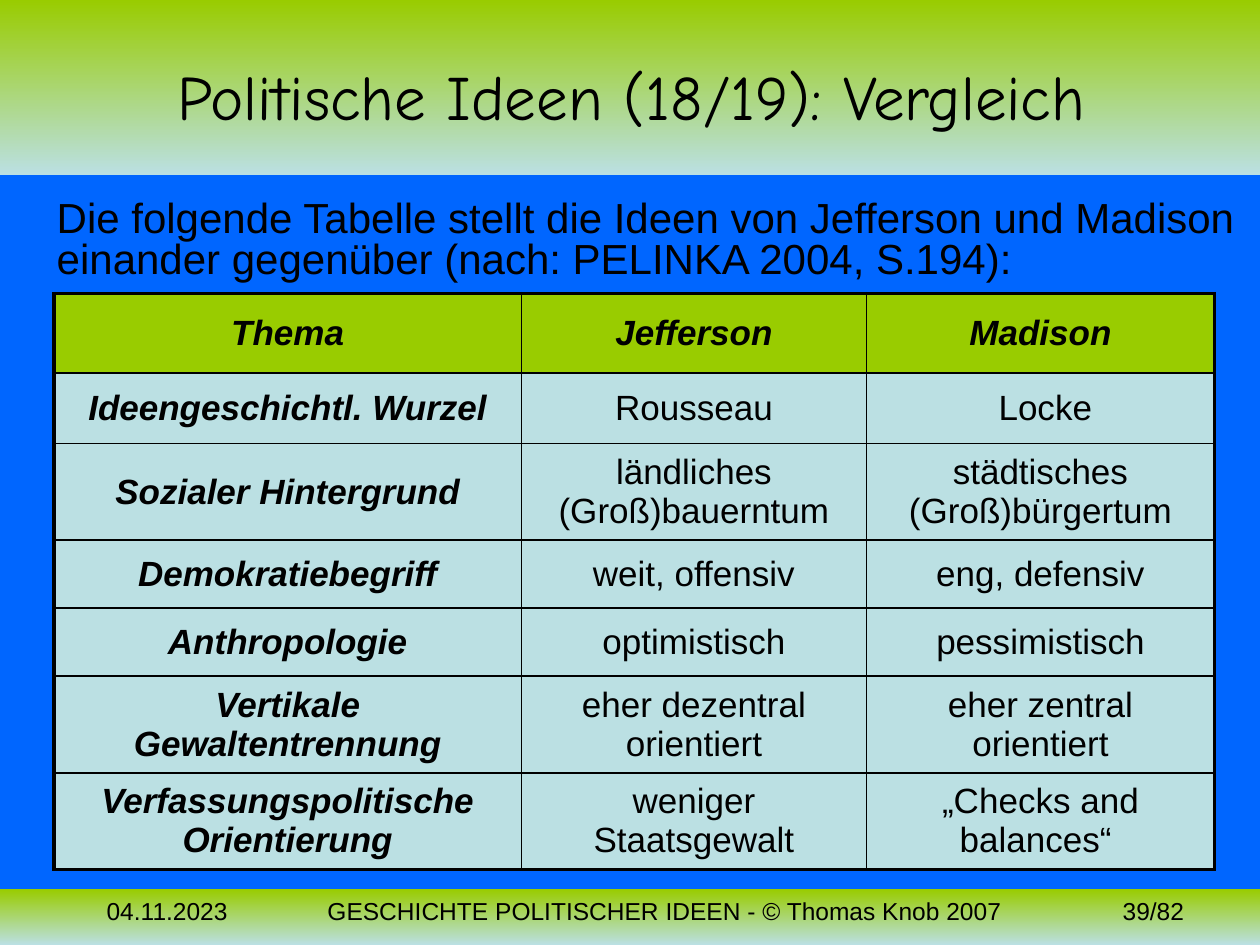
from lxml.etree import SubElement
from pptx import Presentation
from pptx.dml.color import RGBColor
from pptx.enum.shapes import MSO_SHAPE
from pptx.enum.text import MSO_ANCHOR, MSO_AUTO_SIZE, PP_ALIGN
from pptx.oxml.ns import qn
from pptx.util import Cm, Pt

TITLE = "Politische Ideen (18/19): Vergleich"
INTRO = ("Die folgende Tabelle stellt die Ideen von Jefferson und Madison "
         "einander gegenüber (nach: PELINKA 2004, S.194):")
# "\v" is a line break inside a paragraph
ROWS = [
    ("Thema", "Jefferson", "Madison"),
    ("Ideengeschichtl. Wurzel", "Rousseau", " Locke"),
    ("Sozialer Hintergrund", "ländliches\v(Groß)bauerntum", "städtisches\v(Groß)bürgertum"),
    ("Demokratiebegriff", "weit, offensiv", "eng, defensiv"),
    ("Anthropologie", "optimistisch", "pessimistisch"),
    ("Vertikale\vGewaltentrennung", "eher dezentral\vorientiert", "eher zentral\vorientiert"),
    ("Verfassungspolitische\vOrientierung", "weniger\vStaatsgewalt", "„Checks and\vbalances“ "),
]
# text, left, width (cm), alignment
FOOTER = [
    ("04.11.2023", 1.9, 4.2, PP_ALIGN.LEFT),
    ("GESCHICHTE POLITISCHER IDEEN - © Thomas Knob 2007", 6.1, 14.6, PP_ALIGN.CENTER),
    ("39/82", 21.32, 2.8, PP_ALIGN.RIGHT),
]
COLORS = {"background": "0066FF", "green": "99CC00", "pale": "BBE0E3", "text": "000000"}
COLUMN_WIDTHS = (9.42, 6.96, 7.01)
ROW_HEIGHTS = (1.6, 1.42) + (1.37,) * 5
SLIDE_WIDTH, SLIDE_HEIGHT = 25.4, 19.05
HEADER_HEIGHT, FOOTER_HEIGHT = 3.53, 1.12
FOOTER_TOP = SLIDE_HEIGHT - FOOTER_HEIGHT
OUTER_LINE, INNER_LINE = 2.25, 1


def color(name):
    return RGBColor.from_string(COLORS[name])


def place(shape, left, top, width, height):
    shape.left, shape.top, shape.width, shape.height = map(Cm, (left, top, width, height))


def write(text_frame, text, size, alignment, font="Arial", bold=False):
    """Fill the frame with one paragraph; bold text is also italic."""
    text_frame.text = text
    paragraph = text_frame.paragraphs[0]
    paragraph.alignment = alignment
    for run in paragraph.runs:
        run.font.name, run.font.size = font, Pt(size)
        run.font.bold = run.font.italic = bold
        run.font.color.rgb = color("text")
    return paragraph


def add_band(slide, position, top, height):
    """Add a full-width gradient band behind the placeholders."""
    band = slide.shapes.add_shape(MSO_SHAPE.RECTANGLE, 0, Cm(top), Cm(SLIDE_WIDTH), Cm(height))
    band.shadow.inherit = False
    band.line.fill.background()
    band.fill.gradient()
    band.fill.gradient_angle = 270
    for stop, name, offset in zip(band.fill.gradient_stops, ("green", "pale"), (0, 1)):
        stop.color.rgb, stop.position = color(name), offset
    slide.shapes._spTree.insert(2 + position, band._element)


def set_borders(cell, widths):
    """Draw left, right, top and bottom borders, ahead of the cell fill."""
    properties = cell._tc.get_or_add_tcPr()
    for index, (side, width) in enumerate(zip("LRTB", widths)):
        line = SubElement(properties, qn(f"a:ln{side}"), w=str(Pt(width)))
        fill = SubElement(line, qn("a:solidFill"))
        SubElement(fill, qn("a:srgbClr"), val=COLORS["text"])
        properties.insert(index, line)


def add_comparison(slide):
    frame = slide.shapes.add_table(len(ROWS), len(COLUMN_WIDTHS), Cm(1.09), Cm(5.92),
                                   Cm(sum(COLUMN_WIDTHS)), Cm(sum(ROW_HEIGHTS)))
    table = frame.table
    table.first_row = table.horz_banding = False
    for column, width in zip(table.columns, COLUMN_WIDTHS):
        column.width = Cm(width)
    for row, height in zip(table.rows, ROW_HEIGHTS):
        row.height = Cm(height)
    last_row, last_column = len(ROWS) - 1, len(COLUMN_WIDTHS) - 1
    for r, texts in enumerate(ROWS):
        for c, text in enumerate(texts):
            cell = table.cell(r, c)
            cell.vertical_anchor = MSO_ANCHOR.MIDDLE
            cell.fill.solid()
            cell.fill.fore_color.rgb = color("green" if r == 0 else "pale")
            paragraph = write(cell.text_frame, text, 20, PP_ALIGN.CENTER, bold=r == 0 or c == 0)
            spacing = SubElement(paragraph._p.get_or_add_pPr(), qn("a:spcBef"))
            SubElement(spacing, qn("a:spcPct"), val="20000")
            outer = (c == 0, c == last_column, r == 0, r == last_row)
            set_borders(cell, [OUTER_LINE if edge else INNER_LINE for edge in outer])


def main():
    presentation = Presentation()
    presentation.slide_width, presentation.slide_height = Cm(SLIDE_WIDTH), Cm(SLIDE_HEIGHT)
    slide = presentation.slides.add_slide(presentation.slide_layouts[1])
    slide.background.fill.solid()
    slide.background.fill.fore_color.rgb = color("background")
    add_band(slide, 0, FOOTER_TOP, FOOTER_HEIGHT)
    add_band(slide, 1, 0, HEADER_HEIGHT)

    title, body = slide.shapes.title, slide.placeholders[1]
    place(title, 1.3, 0.33, 22.86, 3.2)
    write(title.text_frame, TITLE, 36, PP_ALIGN.CENTER, "Comic Neue")
    title.text_frame.vertical_anchor = MSO_ANCHOR.MIDDLE
    place(body, 0.89, 3.94, 24.51, 13.08)
    intro = write(body.text_frame, INTRO, 24, PP_ALIGN.LEFT)
    intro.line_spacing = 0.8
    properties = intro._p.get_or_add_pPr()
    properties.set("marL", "0")
    properties.set("indent", "0")
    SubElement(properties, qn("a:buNone"))
    for placeholder in (title, body):
        placeholder.text_frame.auto_size = MSO_AUTO_SIZE.NONE

    for text, left, width, alignment in FOOTER:
        box = slide.shapes.add_textbox(Cm(left), Cm(FOOTER_TOP), Cm(width), Cm(FOOTER_HEIGHT))
        box.text_frame.word_wrap = True
        write(box.text_frame, text, 14, alignment)
    add_comparison(slide)
    presentation.save("out.pptx")


if __name__ == "__main__":
    main()
